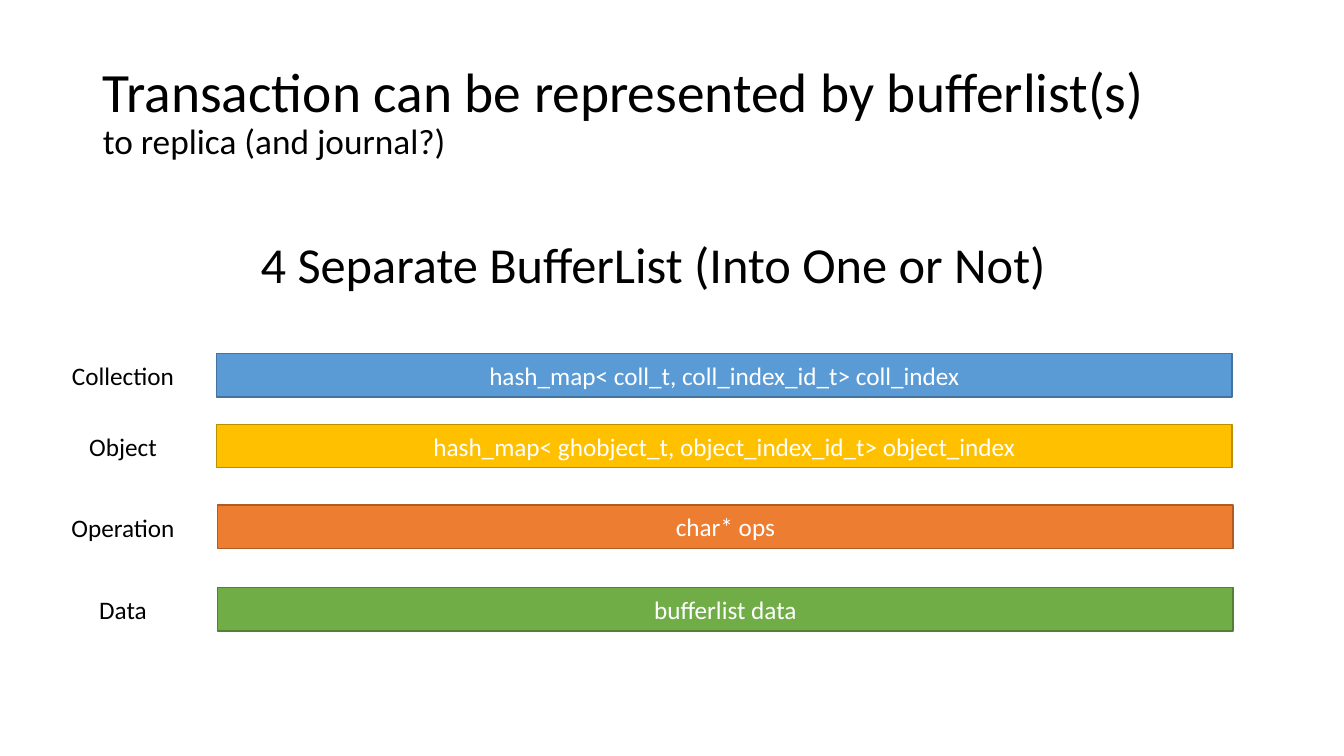
from lxml.etree import SubElement
from pptx import Presentation
from pptx.dml.color import RGBColor
from pptx.enum.shapes import MSO_SHAPE
from pptx.enum.text import MSO_ANCHOR, MSO_AUTO_SIZE, PP_ALIGN
from pptx.oxml.ns import qn
from pptx.util import Inches, Pt

BLACK = RGBColor(0x00, 0x00, 0x00)
WHITE = RGBColor(0xFF, 0xFF, 0xFF)
BLUE = RGBColor(0x5B, 0x9B, 0xD5)
DARK_BLUE = RGBColor(0x43, 0x73, 0x9E)
GOLD = RGBColor(0xFF, 0xC0, 0x00)
DARK_GOLD = RGBColor(0xBD, 0x8E, 0x00)
ORANGE = RGBColor(0xED, 0x7D, 0x31)
DARK_ORANGE = RGBColor(0xAF, 0x5C, 0x24)
GREEN = RGBColor(0x70, 0xAD, 0x47)
DARK_GREEN = RGBColor(0x53, 0x80, 0x35)


def add_text(paragraph, text, size, color=BLACK):
    run = paragraph.add_run()
    run.text = text
    run.font.name = "Calibri"
    run.font.size = Pt(size)
    run.font.color.rgb = color


def add_caption(left, top, width, height, text, size, wrap):
    caption = slide.shapes.add_textbox(
        Inches(left), Inches(top), Inches(width), Inches(height))
    caption.text_frame.word_wrap = wrap
    caption.text_frame.auto_size = MSO_AUTO_SIZE.SHAPE_TO_FIT_TEXT
    paragraph = caption.text_frame.paragraphs[0]
    paragraph.alignment = PP_ALIGN.CENTER
    add_text(paragraph, text, size)


presentation = Presentation()
presentation.slide_width = Inches(13.33)
presentation.slide_height = Inches(7.5)
slide = presentation.slides.add_slide(presentation.slide_layouts[5])

title = slide.shapes.title
title.left, title.top = Inches(0.92), Inches(0.4)
title.width, title.height = Inches(11.5), Inches(1.45)
title.text_frame.vertical_anchor = MSO_ANCHOR.MIDDLE
title.text_frame.auto_size = MSO_AUTO_SIZE.NONE
heading = title.text_frame.paragraphs[0]
heading.alignment = PP_ALIGN.LEFT
heading.line_spacing = 0.9
add_text(heading, "Transaction can be represented by bufferlist(s)", 39.6)
heading.add_line_break()
SubElement(heading._p[-1], qn("a:rPr"), sz="3960")
add_text(heading, "to replica (and journal?)", 25.2)

add_caption(0.61, 2.26, 11.74, 0.71,
            "4 Separate BufferList (Into One or Not)", 36, True)

buffers = [
    ("Collection", 1.23, "hash_map< coll_t, coll_index_id_t> coll_index",
     2.15, 3.51, BLUE, DARK_BLUE),
    ("Object", 0.88, "hash_map< ghobject_t, object_index_id_t> object_index",
     2.15, 4.21, GOLD, DARK_GOLD),
    ("Operation", 1.24, "char* ops", 2.16, 5.01, ORANGE, DARK_ORANGE),
    ("Data", 0.68, "bufferlist data", 2.16, 5.83, GREEN, DARK_GREEN),
]
label_center = 1.22

for label, label_width, content, left, top, fill, outline in buffers:
    bar = slide.shapes.add_shape(
        MSO_SHAPE.RECTANGLE, Inches(left), Inches(top), Inches(10.07), Inches(0.43))
    bar.shadow.inherit = False
    bar.fill.solid()
    bar.fill.fore_color.rgb = fill
    bar.line.color.rgb = outline
    bar.line.width = Pt(1)
    bar.text_frame.vertical_anchor = MSO_ANCHOR.MIDDLE
    bar_text = bar.text_frame.paragraphs[0]
    bar_text.alignment = PP_ALIGN.CENTER
    add_text(bar_text, content, 18, WHITE)
    add_caption(label_center - label_width / 2, top + 0.02, label_width, 0.4,
                label, 18, False)

presentation.save("out.pptx")
